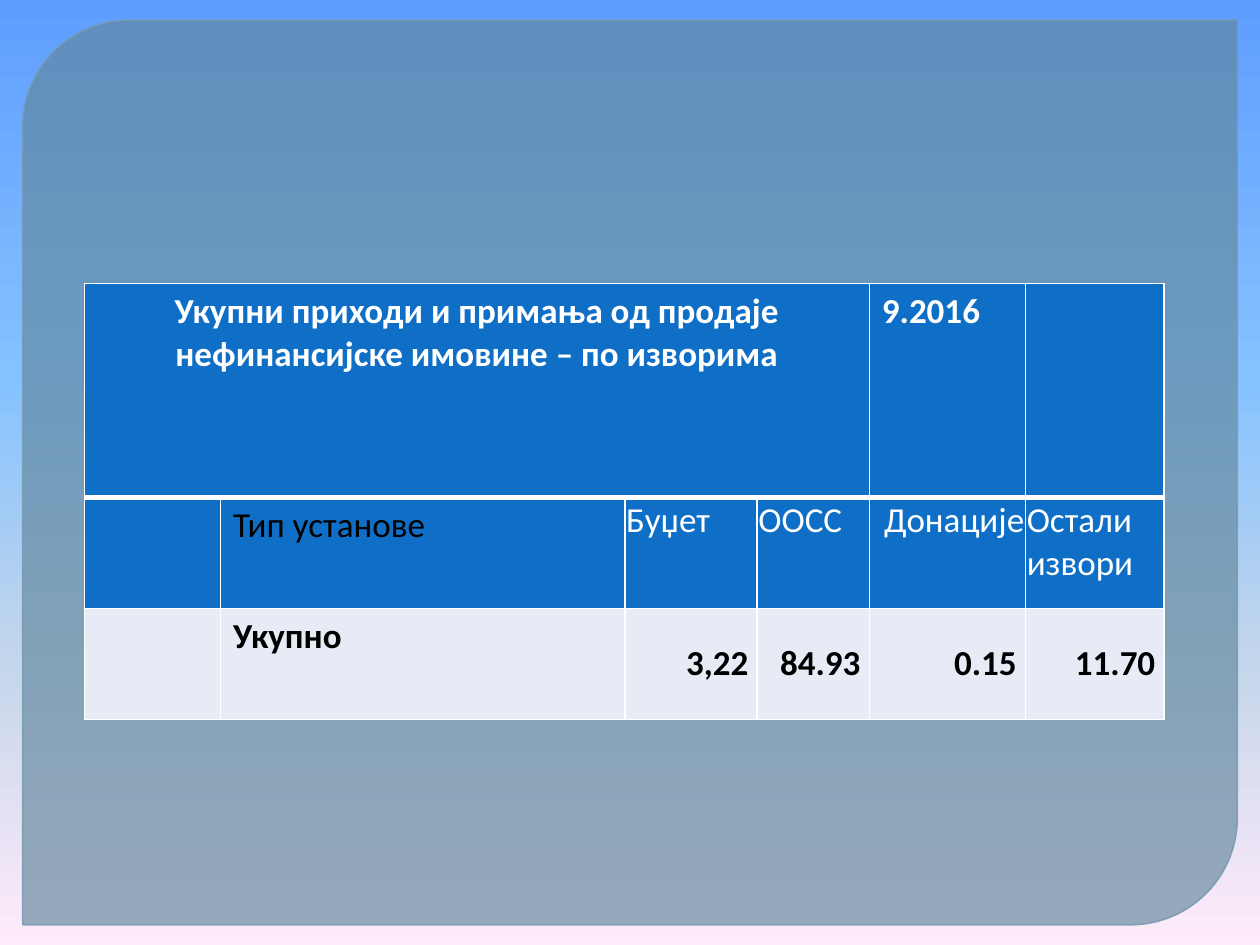
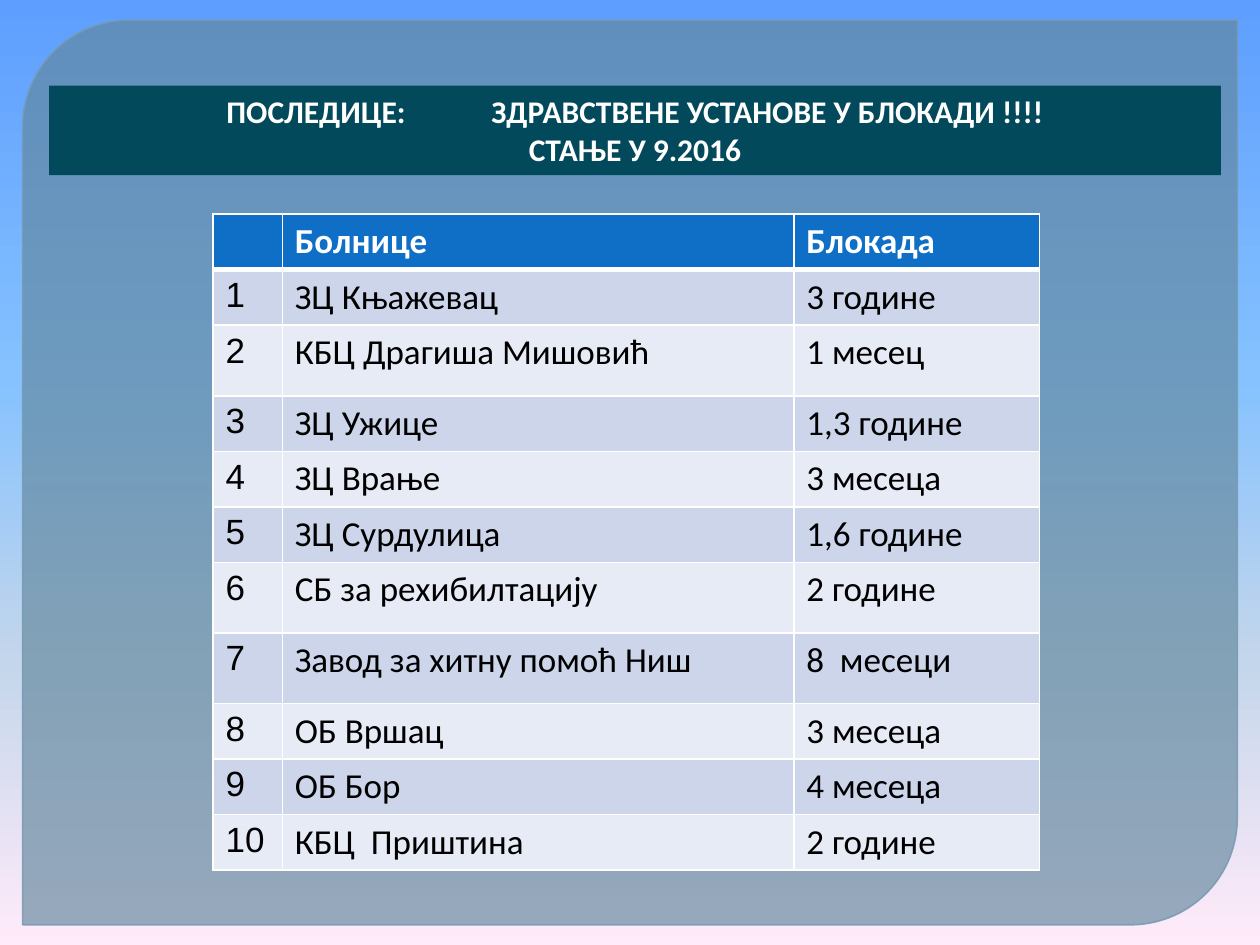
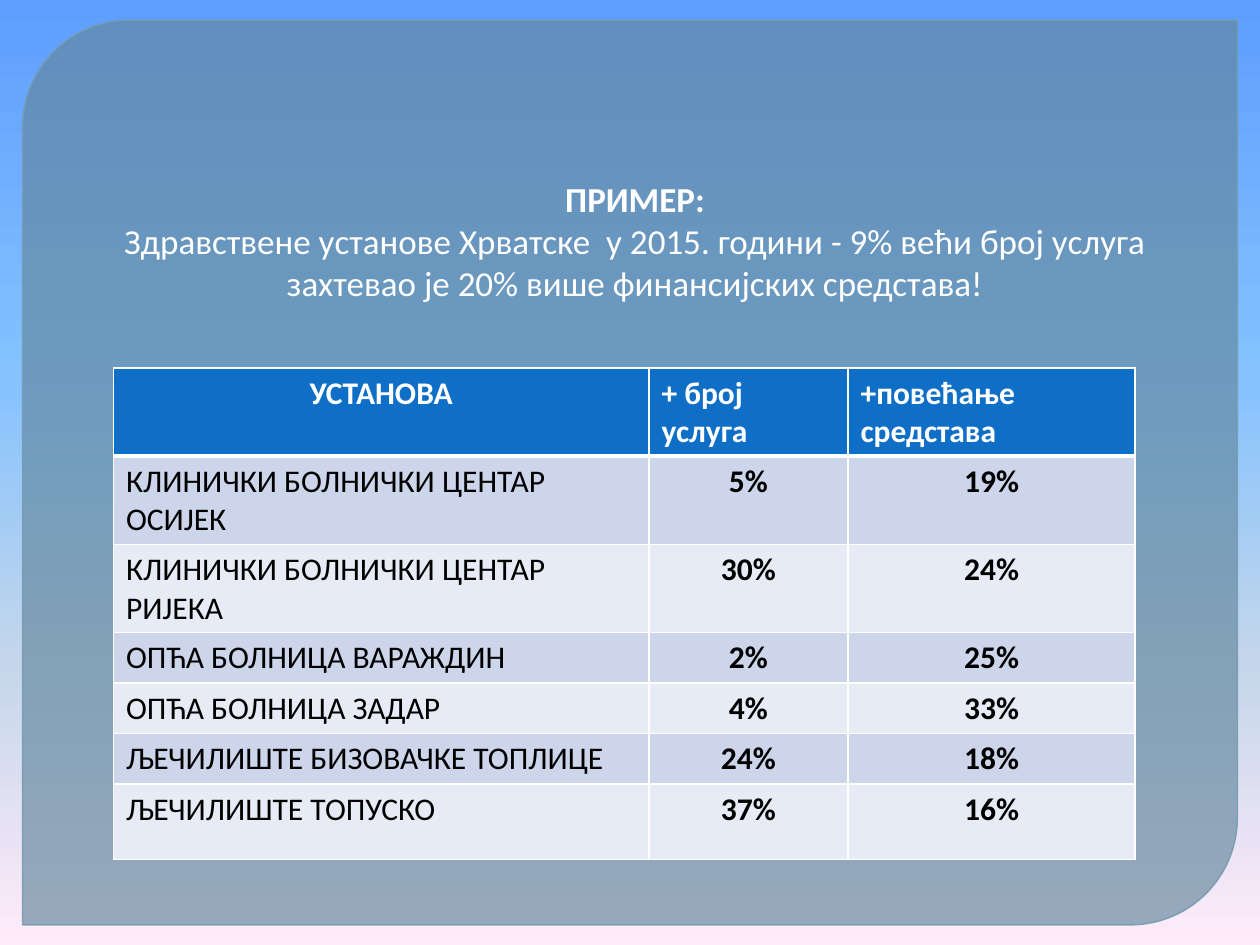
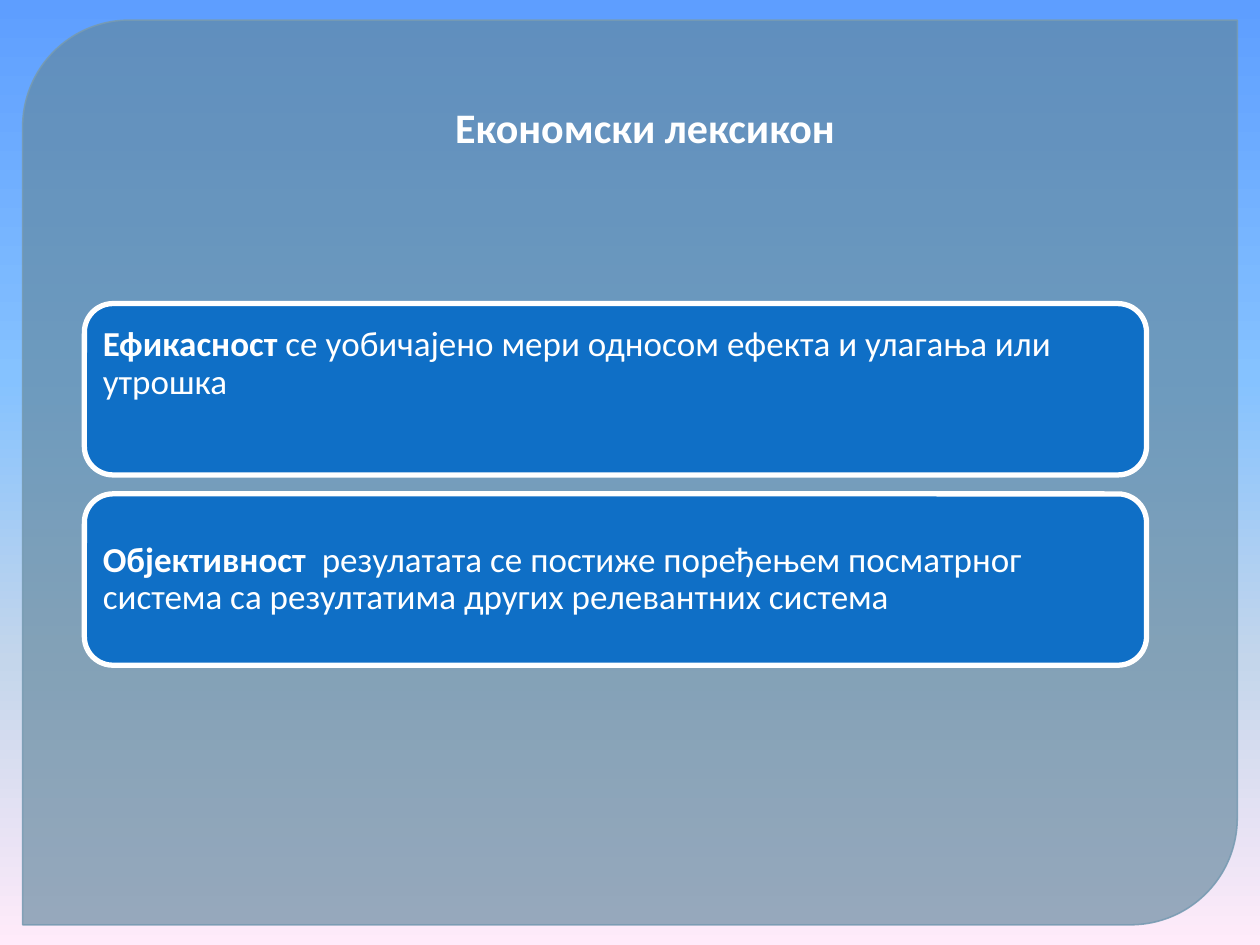
import copy

import pptx
import pptx.dml.color
import pptx.enum.shapes
import pptx.enum.text
import pptx.oxml
import pptx.oxml.ns
import pptx.util

Inches = pptx.util.Inches
Pt = pptx.util.Pt
Kind = pptx.enum.shapes.MSO_SHAPE
Align = pptx.enum.text.PP_ALIGN
Anchor = pptx.enum.text.MSO_ANCHOR
qn = pptx.oxml.ns.qn

WHITE, BLACK = "FFFFFF", "000000"
BLUE, BAND = "0F6FC6", "03495C"
ODD, EVEN = "CCD5EA", "E7EBF5"
SKY = [(0, "5E9EFF"), (40, "85C2FF"), (70, "C4D6EB"), (100, "FFEBFA")]


def rgb(code):
    return pptx.dml.color.RGBColor.from_string(code)


def fade(node, share):
    """Make the one colour below node opaque to the given percentage."""
    color = next(node.iter(qn("a:srgbClr")))
    color.append(pptx.oxml.parse_xml(
        f'<a:alpha {pptx.oxml.ns.nsdecls("a")} val="{share * 1000}"/>'))


class Deck:
    def __init__(self):
        self.prs = pptx.Presentation()
        self.prs.slide_width, self.prs.slide_height = Inches(10), Inches(7.5)
        self.master = self.prs.slide_master
        self.font = "Calibri"
        self.slide = None
        self.sky()

    def sky(self):
        fill = self.master.background.fill
        fill.gradient()
        fill.gradient_angle = 270
        stops = next(self.master.element.iter(qn("a:gsLst")))
        stops.append(copy.deepcopy(stops[0]))
        stops.append(copy.deepcopy(stops[0]))
        for stop, (place, color) in zip(fill.gradient_stops, SKY):
            stop.position = place / 100
            stop.color.rgb = rgb(color)

    def add(self):
        self.slide = self.prs.slides.add_slide(self.prs.slide_layouts[6])
        if len(self.prs.slides) == 1:
            self.panel()

    def panel(self):
        """Draw the large panel once and hand it to the master."""
        shape = self.shape(Kind.ROUND_2_DIAG_RECTANGLE, (0.18, 0.16, 9.64, 7.18),
                           "61869C", "779BB2", 0.87)
        shape.adjustments[0], shape.adjustments[1] = 0.118, 0
        props = shape.element.spPr
        fade(props.find(qn("a:solidFill")), 65)
        fade(props.find(qn("a:ln")), 88)
        shape.element.nvSpPr.cNvPr.set("id", "20")
        self.master.shapes.element.append(shape.element)

    def shape(self, kind, at, fill, line=None, width=1):
        shape = self.slide.shapes.add_shape(kind, *map(Inches, at))
        shape.shadow.inherit = False
        shape.fill.solid()
        shape.fill.fore_color.rgb = rgb(fill)
        if line:
            shape.line.color.rgb = rgb(line)
            shape.line.width = Pt(width)
        else:
            shape.line.fill.background()
        return shape

    def box(self, at):
        return self.slide.shapes.add_textbox(*map(Inches, at))

    def label(self, shape, paras, size, align=Align.CENTER, anchor=Anchor.TOP,
              inset=(0.1, 0.05, 0.1, 0.05), space=None):
        """Fill a shape; each paragraph is a list of (text, bold) runs."""
        frame = shape.text_frame
        frame.word_wrap = True
        frame.vertical_anchor = anchor
        (frame.margin_left, frame.margin_top,
         frame.margin_right, frame.margin_bottom) = map(Inches, inset)
        for i, runs in enumerate(paras):
            para = frame.add_paragraph() if i else frame.paragraphs[0]
            para.alignment = align
            para.line_spacing = space
            for text, bold in runs:
                run = para.add_run()
                run.text = text
                self.style(run, size, WHITE, bold, self.font)

    def style(self, run, size, color, bold, font):
        run.font.size = Pt(size)
        run.font.bold = bold
        run.font.name = font
        run.font.color.rgb = rgb(color)

    def table(self, at, cols, rows, data, size, look):
        """Draw a table; look(row, col) gives what differs from the default."""
        frame = self.slide.shapes.add_table(
            len(rows), len(cols), *map(Inches, (*at, sum(cols), sum(rows))))
        table = frame.table
        table.first_row = table.horz_banding = False
        for col, width in zip(table.columns, cols):
            col.width = Inches(width)
        for row, height in zip(table.rows, rows):
            row.height = Inches(height)
        for r, line in enumerate(data):
            for c, text in enumerate(line):
                base = {"fill": ODD if r % 2 else EVEN, "color": BLACK}
                if r == 0:
                    base = {"fill": BLUE, "color": WHITE, "bold": True}
                cell = table.cell(r, c)
                self.edge(cell, r)
                self.cell(cell, text, size, **{**base, **look(r, c)})
        return table

    def edge(self, cell, row):
        """Set white borders, thick between the header and the body."""
        props = cell._tc.get_or_add_tcPr()
        thick = {(0, "B"), (1, "T")}
        for side in "LRTB":
            width = Pt(3 if (row, side) in thick else 1)
            props.append(pptx.oxml.parse_xml(
                f'<a:ln{side} {pptx.oxml.ns.nsdecls("a")} w="{width}"><a:solidFill>'
                f'<a:srgbClr val="{WHITE}"/></a:solidFill></a:ln{side}>'))

    def cell(self, cell, text, size, fill, color, bold=False, align=Align.LEFT,
             font=None, anchor=Anchor.TOP, inset=(0.1, 0.05, 0.1, 0.05)):
        cell.fill.solid()
        cell.fill.fore_color.rgb = rgb(fill)
        (cell.margin_left, cell.margin_top,
         cell.margin_right, cell.margin_bottom) = map(Inches, inset)
        cell.vertical_anchor = anchor
        cell.text_frame.text = text
        para = cell.text_frame.paragraphs[0]
        para.alignment = align
        for run in para.runs:
            self.style(run, size, color, bold, font or self.font)


def income(deck):
    deck.add()
    data = [
        ["Укупни приходи и примања од продаје нефинансијске имовине – по изворима",
         "", "", "", "9.2016", ""],
        ["", "Тип установе", "Буџет", "ООСС", "Донације", "Остали извори"],
        ["", "Укупно", "3,22", "84.93", "0.15", "11.70"],
    ]

    def look(r, c):
        if r == 0:
            return {"align": Align.CENTER} if c == 0 else {}
        if r == 1:
            if c < 2:
                return {"fill": BLUE}
            return {"fill": BLUE, "color": WHITE, "inset": (0.01, 0.01, 0.01, 0),
                    "align": Align.RIGHT if c == 4 else Align.LEFT}
        if c < 2:
            return {"bold": True}
        return {"bold": True, "align": Align.RIGHT, "anchor": Anchor.MIDDLE,
                "inset": (0.07, 0, 0.07, 0)}

    table = deck.table((0.67, 2.25), [1.08, 3.21, 1.05, 0.89, 1.24, 1.1],
                       [1.7, 0.88, 0.88], data, 20, look)
    table.cell(0, 0).merge(table.cell(0, 3))


def blocked(deck):
    deck.add()
    homes = [
        ("ЗЦ Књажевац", "3 године"),
        ("КБЦ Драгиша Мишовић", "1 месец"),
        ("ЗЦ Ужице", "1,3 године"),
        ("ЗЦ Врање", "3 месеца"),
        ("ЗЦ Сурдулица", "1,6 године"),
        ("СБ за рехибилтацију", "2 године"),
        ("Завод за хитну помоћ Ниш", "8  месеци"),
        ("ОБ Вршац", "3 месеца"),
        ("ОБ Бор", "4 месеца"),
        ("КБЦ  Приштина", "2 године"),
    ]
    data = [("", "Болнице", "Блокада")]
    data += [(str(i), *home) for i, home in enumerate(homes, 1)]
    rows = [0.56 if i in (2, 6, 7) else 0.32 for i in range(len(data))]
    deck.table((1.69, 1.7), [0.55, 4.06, 1.95], rows, data, 20,
               lambda r, c: {"font": "Arial"} if c == 0 else {})

    band = deck.shape(Kind.RECTANGLE, (0.39, 0.68, 9.3, 0.71), BAND)
    deck.label(band, [
        [("ПОСЛЕДИЦЕ:", True), (" ", True),
         ("ЗДРАВСТВЕНЕ УСТАНОВЕ У БЛОКАДИ !!!!", True)],
        [("СТАЊЕ У 9.2016", True)],
    ], 18)
    gap = band.text_frame.paragraphs[0].runs[1]
    gap.font._element.set("spc", "4480")


def sample(deck):
    deck.add()
    deck.label(deck.box((0.75, 1.07, 8.58, 3.43)), [
        [("ПРИМЕР:", True)],
        [("Здравствене установе Хрватске  у 2015. години - 9% већи број услуга "
          "захтевао је 20% више финансијских средстава!", False)],
    ], 20, inset=(0.1, 0.34, 0.1, 0.05))
    data = [
        ("УСТАНОВА", "+ број услуга", "+повећање средстава"),
        ("КЛИНИЧКИ БОЛНИЧКИ ЦЕНТАР ОСИЈЕК", "5%", "19%"),
        ("КЛИНИЧКИ БОЛНИЧКИ ЦЕНТАР РИЈЕКА", "30%", "24%"),
        ("ОПЋА БОЛНИЦА ВАРАЖДИН", "2%", "25%"),
        ("ОПЋА БОЛНИЦА ЗАДАР", "4%", "33%"),
        ("ЉЕЧИЛИШТЕ БИЗОВАЧКЕ ТОПЛИЦЕ", "24%", "18%"),
        ("ЉЕЧИЛИШТЕ ТОПУСКО", "37%", "16%"),
    ]

    def look(r, c):
        middle = (r == 0) == (c == 0)
        return {"bold": r == 0 or c > 0,
                "align": Align.CENTER if middle else Align.LEFT}

    deck.table((0.9, 2.92), [4.25, 1.58, 2.28], [0.36] + [0.34] * 5 + [0.6],
               data, 18, look)


def terms(deck):
    deck.add()
    deck.label(deck.box((0.55, 0.76, 9.14, 1.41)),
               [[("Економски лексикон", True)]], 24)
    cards = [
        ("Ефикасност", " се уобичајено мери односом ефекта и улагања или утрошка",
         0.48),
        ("Објективност", "  резулатата се постиже поређењем посматрног система "
         "са резултатима других релевантних система", 0.08),
    ]
    for i, (term, text, foot) in enumerate(cards):
        card = deck.shape(Kind.ROUNDED_RECTANGLE, (0.67, 2.41 + 1.51 * i, 8.43, 1.36),
                          BLUE, WHITE, 3)
        deck.label(card, [[(term, True), (text, False)]], 20, Align.LEFT,
                   Anchor.MIDDLE, (0.08, 0.08, 0.08, foot), 0.9)


def main():
    deck = Deck()
    for build in (income, blocked, sample, terms):
        build(deck)
    deck.prs.save("out.pptx")


if __name__ == "__main__":
    main()
